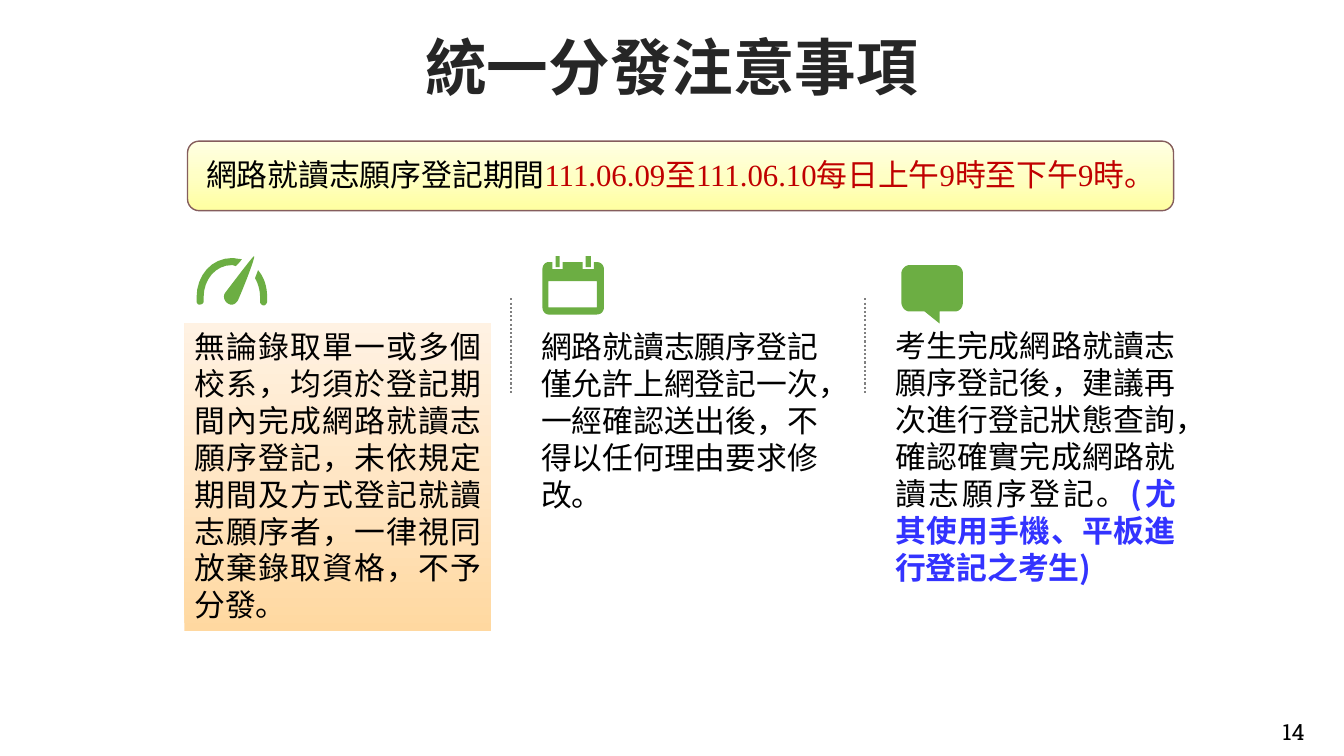
from copy import deepcopy

from lxml import etree
from pptx import Presentation
from pptx.dml.color import RGBColor
from pptx.enum.dml import MSO_LINE
from pptx.enum.shapes import MSO_CONNECTOR, MSO_SHAPE
from pptx.enum.text import MSO_ANCHOR, MSO_AUTO_SIZE, PP_ALIGN
from pptx.oxml.ns import qn
from pptx.util import Inches, Pt

LEFT, CENTER, JUSTIFY = PP_ALIGN.LEFT, PP_ALIGN.CENTER, PP_ALIGN.JUSTIFY
TOP, MIDDLE = MSO_ANCHOR.TOP, MSO_ANCHOR.MIDDLE
GROW = MSO_AUTO_SIZE.SHAPE_TO_FIT_TEXT

BLACK = RGBColor(0, 0, 0)
CHARCOAL = RGBColor(0x26, 0x26, 0x26)
RED = RGBColor(0xC0, 0, 0)
BLUE = RGBColor(0x33, 0x33, 0xFF)
GREEN = RGBColor(0x6C, 0xAE, 0x43)
GREY = RGBColor(0x80, 0x80, 0x80)
BROWN = RGBColor(0x85, 0x5D, 0x5D)
YELLOWS = [RGBColor(0xFF, 0xFF, blue) for blue in (0xA0, 0xC5, 0xE3)]
ORANGES = [RGBColor(0xFF, 0xD8, 0xA0), RGBColor(0xFF, 0xE6, 0xC5), RGBColor(0xFF, 0xF2, 0xE3)]

CJK, SERIF, SLAB = "Noto Sans CJK SC", "Times New Roman", "Roboto Slab"
BODY = {"name": CJK, "size": Pt(22), "bold": False}

# Content: runs are (text, colour, font changes)
TITLE = [("統一分發注意事項", CHARCOAL, {"size": Pt(44), "bold": True})]
PERIOD = [
    ("網路就讀志願序登記期間", BLACK, {}),
    ("111.06.09至111.06.10每日上午9時至下午9時。", RED, {"name": SERIF}),
]
PAGE_NUMBER = [("14", BLACK, {"name": SLAB, "size": Pt(16)})]
NOTES = [  # left, top, width, height, alignment, runs
    (1.83, 3.2, 3.04, 3.06, JUSTIFY,
     [("無論錄取單一或多個校系，均須於登記期間內完成網路就讀志願序登記，"
       "未依規定期間及方式登記就讀志願序者，一律視同放棄錄取資格，不予分發。", BLACK, {})]),
    (5.27, 3.2, 3.1, 1.95, LEFT,
     [("網路就讀志願序登記僅允許上網登記一次，一經確認送出後，不得以任何理由要求修改。", BLACK, {})]),
    (8.78, 3.19, 2.98, 2.69, JUSTIFY,
     [("考生完成網路就讀志願序登記後，建議再次進行登記狀態查詢，確認確實完成網路就讀志願序登記。", BLACK, {}),
      ("(尤其使用手機、平板進行登記之考生)", BLUE, {"bold": True})]),
]
DIVIDERS, DIVIDER_TOP, DIVIDER_BOTTOM = (5.07, 8.58), 2.96, 3.91

# Icon outlines: two numbers are a corner, six are a Bézier curve
GAUGE = [
    [(2.23, 2.91), (2.21, 2.95, 2.23, 2.99, 2.26, 3.01), (2.29, 3.03, 2.33, 3.03, 2.36, 2.98),
     (2.38, 2.94, 2.54, 2.55, 2.52, 2.54), (2.51, 2.54, 2.26, 2.87, 2.23, 2.91)],
    [(2.3, 2.63), (2.32, 2.63, 2.33, 2.64, 2.34, 2.64), (2.36, 2.62, 2.38, 2.6, 2.4, 2.57),
     (2.36, 2.57, 2.33, 2.56, 2.3, 2.56), (2.1, 2.56, 1.95, 2.73, 1.95, 2.95), (1.95, 2.99),
     (1.95, 3.01, 1.97, 3.03, 1.99, 3.02), (2, 3.02, 2.02, 3.01, 2.02, 2.99), (2.02, 2.95),
     (2.02, 2.77, 2.14, 2.63, 2.3, 2.63)],
    [(2.56, 2.68), (2.55, 2.71, 2.54, 2.73, 2.53, 2.76), (2.56, 2.81, 2.58, 2.88, 2.58, 2.95),
     (2.58, 2.99), (2.58, 3.01, 2.59, 3.02, 2.61, 3.03), (2.62, 3.03),
     (2.63, 3.03, 2.65, 3.01, 2.65, 2.99), (2.65, 2.95), (2.65, 2.84, 2.62, 2.75, 2.56, 2.68)],
]
CALENDAR = [
    [(5.92, 2.6), (5.89, 2.6), (5.89, 2.67), (5.78, 2.67), (5.78, 2.6), (5.58, 2.6), (5.58, 2.67),
     (5.48, 2.67), (5.48, 2.6), (5.44, 2.6), (5.41, 2.6, 5.38, 2.63, 5.38, 2.67), (5.38, 3.05),
     (5.38, 3.09, 5.41, 3.12, 5.44, 3.12), (5.92, 3.12), (5.96, 3.12, 5.99, 3.09, 5.99, 3.05),
     (5.99, 2.67), (5.99, 2.63, 5.96, 2.6, 5.92, 2.6)],
    [(5.92, 3.05), (5.44, 3.05), (5.44, 2.79), (5.92, 2.79)],
    [(5.55, 2.54), (5.51, 2.54), (5.51, 2.65), (5.55, 2.65)],
    [(5.86, 2.54), (5.81, 2.54), (5.81, 2.65), (5.86, 2.65)],
]
SPEECH = [
    [(9.47, 2.63), (9.02, 2.63), (8.98, 2.63, 8.94, 2.67, 8.94, 2.71), (8.94, 3),
     (8.94, 3.05, 8.98, 3.09, 9.02, 3.09), (9.17, 3.09), (9.32, 3.21), (9.32, 3.09), (9.47, 3.09),
     (9.52, 3.09, 9.55, 3.05, 9.55, 3), (9.55, 2.71), (9.55, 2.67, 9.52, 2.63, 9.47, 2.63)],
]
CURVE_STEPS = 8

prs = Presentation()
prs.slide_width, prs.slide_height = Inches(13.33), Inches(7.5)
slide = prs.slides.add_slide(prs.slide_layouts[6])
shapes = slide.shapes


def add_text(box, runs, align=LEFT, **frame_format):
    area = tuple(Inches(length) for length in box)
    frame = shapes.add_textbox(*area).text_frame
    for key, value in {"word_wrap": True, "vertical_anchor": TOP, **frame_format}.items():
        setattr(frame, key, value)
    paragraph = frame.paragraphs[0]
    paragraph.alignment = align
    for text, colour, changes in runs:
        run = paragraph.add_run()
        run.text = text
        for key, value in {**BODY, **changes}.items():
            setattr(run.font, key, value)
        run.font.color.rgb = colour
        etree.SubElement(run.font._element, qn("a:ea"), typeface=CJK)
    return paragraph


def add_panel(preset, box, colours):
    panel = shapes.add_shape(preset, *(Inches(length) for length in box))
    panel.shadow.inherit = False
    panel.fill.gradient()
    panel.fill.gradient_angle = 90
    stop_list = panel._element.spPr.find(".//" + qn("a:gsLst"))
    stop_list.append(deepcopy(stop_list[0]))
    for stop, position, colour in zip(panel.fill.gradient_stops, (0, 0.5, 1), colours):
        stop.position = position
        stop.color.rgb = colour
    return panel


def outline_points(contour):
    points = [contour[0]]
    for segment in contour[1:]:
        if len(segment) == 2:
            points.append(segment)
            continue
        (x0, y0), (x1, y1, x2, y2, x3, y3) = points[-1], segment
        for step in range(1, CURVE_STEPS + 1):
            t = step / CURVE_STEPS
            a, b, c, d = (1 - t) ** 3, 3 * t * (1 - t) ** 2, 3 * t * t * (1 - t), t ** 3
            points.append((a * x0 + b * x1 + c * x2 + d * x3, a * y0 + b * y1 + c * y2 + d * y3))
    return [(Inches(x), Inches(y)) for x, y in points]


def add_icon(contours):
    outlines = [outline_points(contour) for contour in contours]
    builder = shapes.build_freeform(*outlines[0][0])
    for index, points in enumerate(outlines):
        if index:
            builder.move_to(*points[0])
        builder.add_line_segments(points[1:], close=True)
    icon = builder.convert_to_shape()
    icon.shadow.inherit = False
    icon.fill.solid()
    icon.fill.fore_color.rgb = GREEN
    icon.line.fill.background()


# Page number and title
add_text((12.62, 7.08, 0.69, 0.37), PAGE_NUMBER, auto_size=GROW)
add_text((2.12, 0.3, 9.09, 0.71), TITLE, CENTER, vertical_anchor=MIDDLE)

# Registration period banner
banner = add_panel(MSO_SHAPE.ROUNDED_RECTANGLE, (1.86, 1.4, 9.78, 0.69), YELLOWS)
banner.line.color.rgb = BROWN
banner.line.width = Pt(1)
insets = {f"margin_{side}": Inches(0.09) for side in ("left", "top", "right", "bottom")}
period = add_text((1.89, 1.44, 9.72, 0.62), PERIOD, CENTER, vertical_anchor=MIDDLE, **insets)
period.line_spacing = 0.9

# Dotted dividers
for x in DIVIDERS:
    divider = shapes.add_connector(MSO_CONNECTOR.STRAIGHT, Inches(x), Inches(DIVIDER_TOP),
                                   Inches(x), Inches(DIVIDER_BOTTOM))
    divider.line.color.rgb = GREY
    divider.line.width = Pt(1.5)
    divider.line.dash_style = MSO_LINE.ROUND_DOT
    etree.SubElement(divider._element.spPr, qn("a:effectLst"))

# Three notes, the first on an orange panel
add_panel(MSO_SHAPE.RECTANGLE, NOTES[0][:4], ORANGES).line.fill.background()
for *box, align, runs in NOTES:
    add_text(box, runs, align, auto_size=GROW)

# Icons above the notes
for contours in (GAUGE, CALENDAR, SPEECH):
    add_icon(contours)

prs.save("out.pptx")
